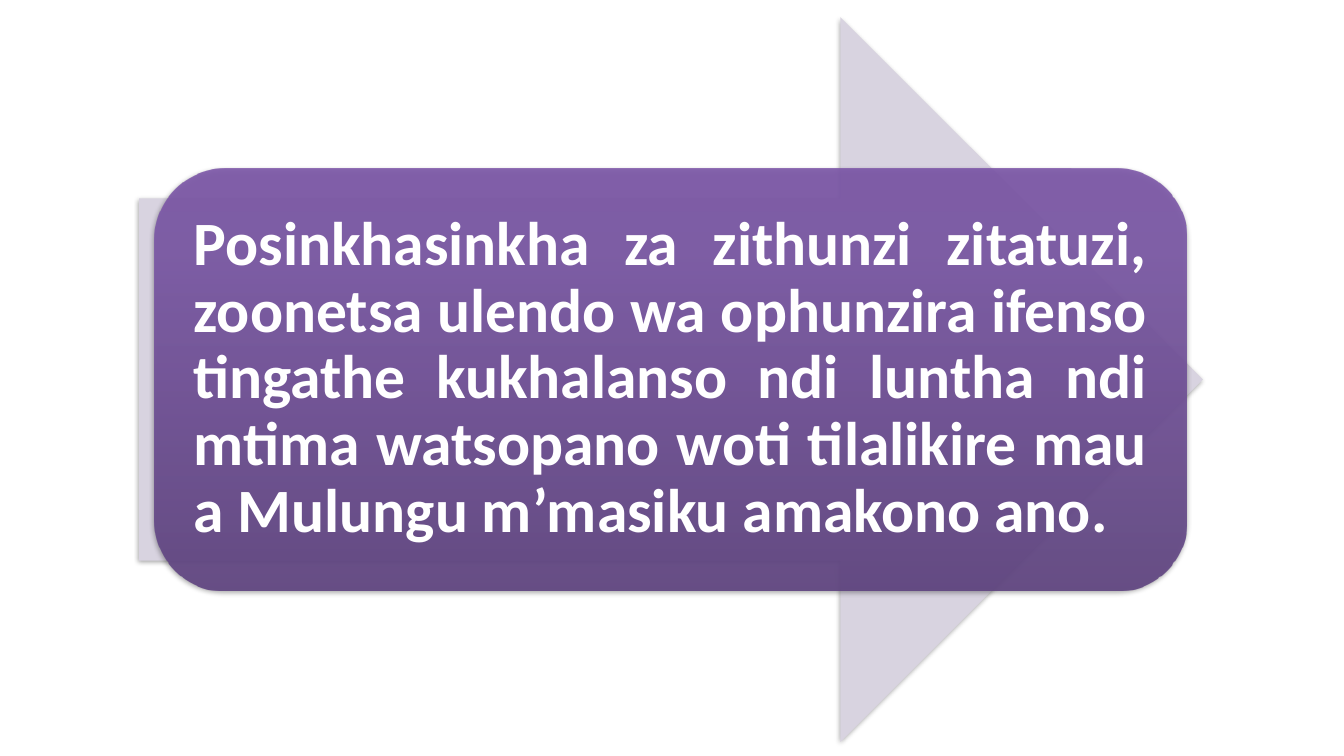
from lxml import etree
from pptx import Presentation
from pptx.dml.color import RGBColor
from pptx.enum.shapes import MSO_SHAPE
from pptx.enum.text import MSO_ANCHOR, PP_ALIGN
from pptx.oxml.ns import qn
from pptx.util import Inches, Pt

ARROW = MSO_SHAPE.RIGHT_ARROW
ROUND = MSO_SHAPE.ROUNDED_RECTANGLE
MIDDLE = MSO_ANCHOR.MIDDLE
JUSTIFY = PP_ALIGN.JUSTIFY

MESSAGE = (
    "Posinkhasinkha za zithunzi zitatuzi, zoonetsa ulendo wa ophunzira ifenso "
    "tingathe kukhalanso ndi luntha ndi mtima watsopano woti tilalikire mau "
    "a Mulungu m’masiku amakono ano."
)


def color(code):
    return RGBColor.from_string(code)


def node(parent, tag, **attrs):
    return etree.SubElement(parent, qn(tag), {k: str(v) for k, v in attrs.items()})


def tint(parent, code, alpha):
    node(node(parent, "a:srgbClr", val=code), "a:alpha", val=alpha * 1000)


def write(frame, text, font="Calibri", size=44, ink="FFFFFF", bold=True):
    para = frame.paragraphs[0]
    para.alignment = JUSTIFY
    para.line_spacing = 0.9
    para.space_after = Pt(15)
    run = para.add_run()
    run.text = text
    run.font.name = font
    run.font.size = Pt(size)
    run.font.bold = bold
    run.font.color.rgb = color(ink)


class Deck:
    """Holds the style and the current slide."""

    arrow = "D8D3E0"
    panel = [(0, "5F4480"), (80, "7B58A6"), (100, "7C57A8")]
    inset = Inches(0.18)

    def __init__(self):
        self.show = Presentation()
        self.show.slide_width = Inches(13.33)
        self.show.slide_height = Inches(7.5)
        self.slide = self.show.slides.add_slide(self.show.slide_layouts[6])

    def shape(self, kind, *box):
        item = self.slide.shapes.add_shape(kind, *map(Inches, box))
        item.line.fill.background()
        self.shadow(item)
        return item

    def shadow(self, item):
        item.shadow.inherit = False
        effects = item._element.spPr.find(qn("a:effectLst"))
        outer = node(effects, "a:outerShdw", blurRad=Pt(3.1), dist=Pt(1.8),
                     dir=90 * 60000, rotWithShape=0)
        tint(outer, "000000", 35)

    def solid(self, item, code):
        item.fill.solid()
        item.fill.fore_color.rgb = color(code)

    def blend(self, item, stops, alpha):
        item.fill.gradient()
        item.fill.gradient_angle = 90
        group = next(item._element.spPr.iter(qn("a:gsLst")))
        for old in list(group):
            group.remove(old)
        for place, code in stops:
            tint(node(group, "a:gs", pos=place * 1000), code, alpha)

    def text(self, words, *box):
        frame = self.slide.shapes.add_textbox(*map(Inches, box)).text_frame
        frame.word_wrap = True
        frame.vertical_anchor = MIDDLE
        frame.margin_left = frame.margin_right = self.inset
        frame.margin_top = frame.margin_bottom = self.inset
        write(frame, words)


def main():
    deck = Deck()

    # Arrow behind the panel
    deck.solid(deck.shape(ARROW, 1.38, 0.17, 10.55, 7.19), deck.arrow)

    # Panel and its message
    deck.blend(deck.shape(ROUND, 1.53, 1.67, 10.24, 4.19), deck.panel, 90)
    deck.text(MESSAGE, 1.74, 1.87, 9.83, 3.78)

    deck.show.save("out.pptx")


if __name__ == "__main__":
    main()
